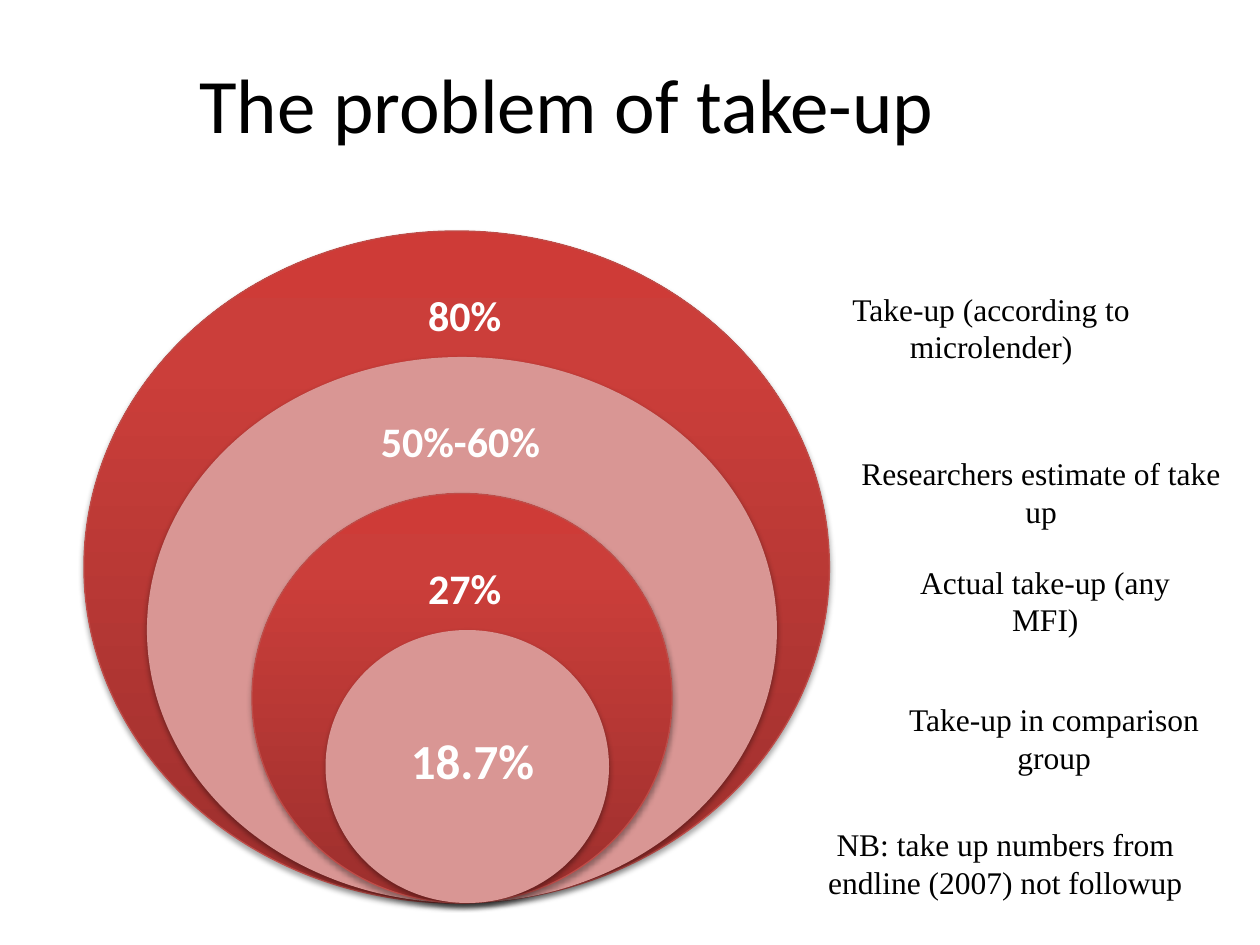
from dataclasses import dataclass
from copy import deepcopy

from lxml import etree
from pptx import Presentation
from pptx.dml.color import RGBColor
from pptx.enum.shapes import MSO_SHAPE
from pptx.enum.text import MSO_ANCHOR, PP_ALIGN
from pptx.oxml.ns import qn
from pptx.util import Inches, Pt

OVAL = MSO_SHAPE.OVAL
CENTER = PP_ALIGN.CENTER
TOP = MSO_ANCHOR.TOP
MIDDLE = MSO_ANCHOR.MIDDLE

COLS, ROWS = 120, 90
WIDTH, HEIGHT = Inches(10), Inches(7.5)


@dataclass(frozen=True)
class Theme:
    sans: str = "Calibri"
    serif: str = "Times New Roman"
    ink: str = "000000"
    white: str = "FFFFFF"
    pink: str = "D99694"
    edge: str = "BF4C48"
    reds: tuple = ((0, "9C2F2D"), (0.8, "CB3E3A"), (1, "CE3B37"))
    title: int = 44
    core: int = 28
    share: int = 24
    note: int = 18


THEME = Theme()

RINGS = (
    ((8, 22, 71, 64), True, "80%", (31.5, 5, 9.5, 6), THEME.share),
    ((14, 34, 60, 52), False, "50%-60%", (21, 5, 17.7, 6), THEME.share),
    ((24, 47, 40, 39), True, "27%", (15.5, 6, 9.5, 6), THEME.share),
    ((31, 60, 27, 26), False, "18.7%", (5, 9, 18, 6.8), THEME.core),
)

NOTES = (
    ((73.8, 27, 41.2, 4.8), "Take-up (according to microlender)"),
    ((79.3, 42.7, 39.7, 4.8), "Researchers estimate of take up"),
    ((83.2, 53, 32.7, 4.8), "Actual take-up (any MFI)"),
    ((81.8, 66.1, 37.2, 4.8), "Take-up in comparison group"),
    ((76.4, 78, 38.7, 8.5), "NB: take up numbers from endline (2007) not followup"),
)


def place(box):
    x, y, w, h = box
    return (round(x * WIDTH / COLS), round(y * HEIGHT / ROWS),
            round(w * WIDTH / COLS), round(h * HEIGHT / ROWS))


def write(slide, box, text, size, face, ink, bold=False, wrap=True, anchor=TOP):
    frame = slide.shapes.add_textbox(*place(box)).text_frame
    frame.word_wrap = wrap
    frame.vertical_anchor = anchor
    para = frame.paragraphs[0]
    para.text = text
    para.alignment = CENTER
    para.font.size = Pt(size)
    para.font.name = face
    para.font.bold = bold
    para.font.color.rgb = RGBColor.from_string(ink)


def shade(shape):
    shape.shadow.inherit = False
    effects = shape._element.spPr.find(qn("a:effectLst"))
    outer = etree.SubElement(effects, qn("a:outerShdw"), blurRad="39370",
                             dist="22860", dir="5400000", rotWithShape="0")
    color = etree.SubElement(outer, qn("a:srgbClr"), val=THEME.ink)
    etree.SubElement(color, qn("a:alpha"), val="35000")


def blend(shape):
    fill = shape.fill
    fill.gradient()
    fill.gradient_angle = 90
    stops = shape._element.spPr.find(qn("a:gradFill")).find(qn("a:gsLst"))
    stops.append(deepcopy(stops[0]))
    for stop, (spot, color) in zip(fill.gradient_stops, THEME.reds):
        stop.position = spot
        stop.color.rgb = RGBColor.from_string(color)


def ring(slide, box, deep, text, inset, size):
    oval = slide.shapes.add_shape(OVAL, *place(box))
    if deep:
        blend(oval)
        oval.line.color.rgb = RGBColor.from_string(THEME.edge)
        oval.line.width = Pt(0.75)
    else:
        oval.fill.solid()
        oval.fill.fore_color.rgb = RGBColor.from_string(THEME.pink)
        oval.line.fill.background()
    shade(oval)
    x, y, w, h = inset
    write(slide, (box[0] + x, box[1] + y, w, h), text, size,
          THEME.sans, THEME.white, bold=True, wrap=False)


def head(slide, box, text):
    write(slide, box, text, THEME.title, THEME.sans, THEME.ink, anchor=MIDDLE)


def note(slide, box, text):
    write(slide, box, text, THEME.note, THEME.serif, THEME.ink)


def main():
    deck = Presentation()
    deck.slide_width, deck.slide_height = WIDTH, HEIGHT
    slide = deck.slides.add_slide(deck.slide_layouts[6])
    head(slide, (0, 3.6, 108, 12.4), "The problem of take-up")
    for item in RINGS:
        ring(slide, *item)
    for item in NOTES:
        note(slide, *item)
    deck.save("out.pptx")


if __name__ == "__main__":
    main()
